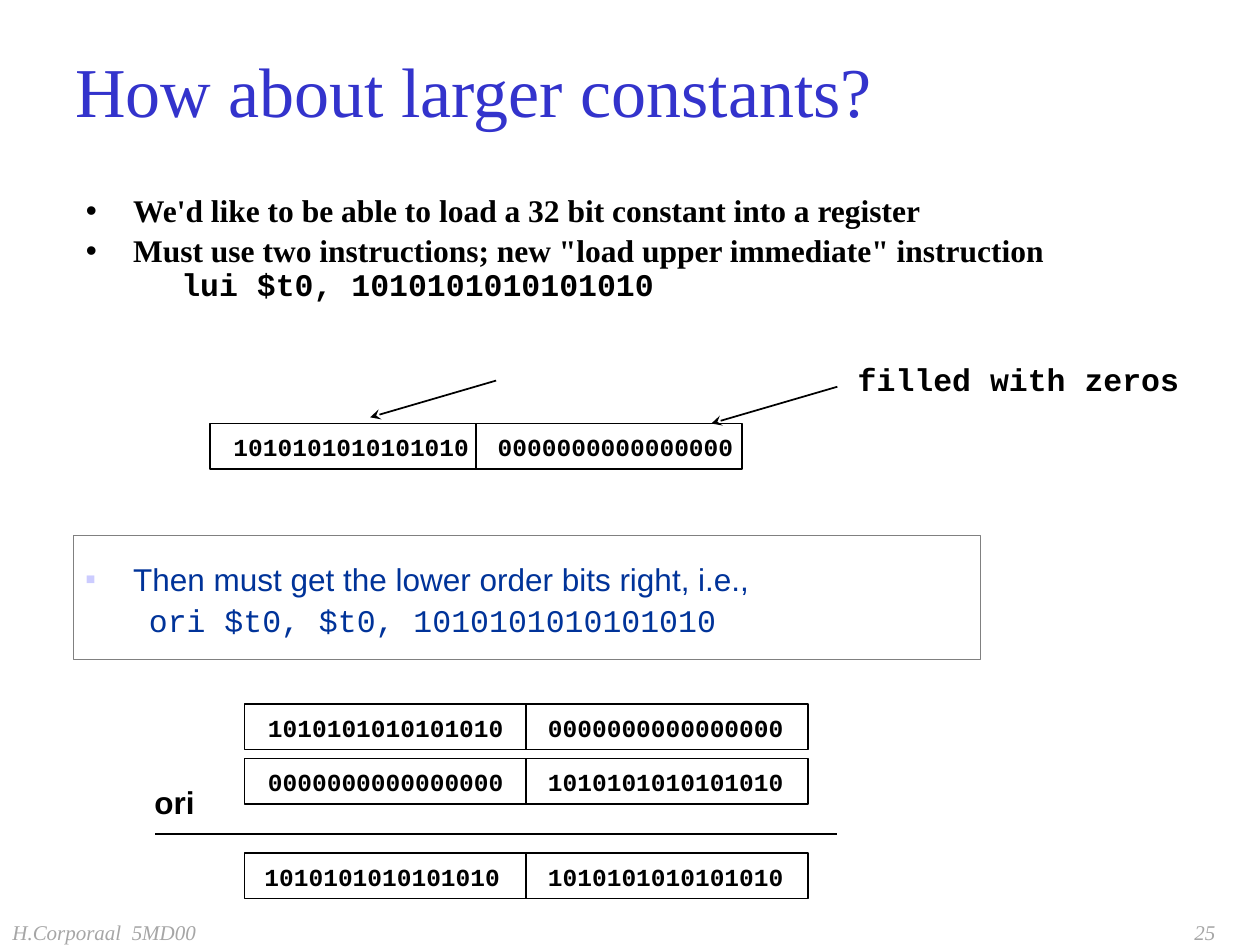
from lxml import etree
from pptx import Presentation
from pptx.dml.color import RGBColor
from pptx.enum.shapes import MSO_CONNECTOR, MSO_SHAPE
from pptx.enum.text import MSO_ANCHOR, PP_ALIGN
from pptx.oxml.ns import qn
from pptx.util import Pt

STRAIGHT = MSO_CONNECTOR.STRAIGHT
RECT = MSO_SHAPE.RECTANGLE
TOP, MIDDLE = MSO_ANCHOR.TOP, MSO_ANCHOR.MIDDLE
LEFT, CENTER, RIGHT = PP_ALIGN.LEFT, PP_ALIGN.CENTER, PP_ALIGN.RIGHT

SERIF, SANS, MONO = "Times New Roman", "Arial", "Courier New"
BLACK, BLUE, NAVY = "000000", "3333CC", "003399"
GRAY, DARK_GRAY, LILAC = "A6A6A6", "808080", "CCCCFF"
WIDE, TIGHT = (7.2, 3.6), (1.44, 2.16)
UPPER, ZEROS = "10" * 8, "0" * 16


def rgb(value):
    return RGBColor.from_string(value)


def set_frame(tf, insets, anchor):
    tf.word_wrap = True
    tf.vertical_anchor = anchor
    tf.margin_left = tf.margin_right = Pt(insets[0])
    tf.margin_top = tf.margin_bottom = Pt(insets[1])


def style(p, font, size, color, bold=False, italic=False, align=LEFT,
          spacing=None, before=0, after=0):
    p.alignment = align
    p.line_spacing = spacing
    p.space_before, p.space_after = Pt(before), Pt(after)
    for r in p.runs:
        r.font.name, r.font.size = font, Pt(size)
        r.font.bold, r.font.italic = bold, italic
        r.font.color.rgb = rgb(color)


def add_text(s, box, text, insets=WIDE, anchor=TOP, **look):
    sp = s.shapes.add_textbox(*map(Pt, box))
    set_frame(sp.text_frame, insets, anchor)
    p = sp.text_frame.paragraphs[0]
    p.text = text
    style(p, **look)


def add_rect(s, box, color, width):
    sp = s.shapes.add_shape(RECT, *map(Pt, box))
    sp.shadow.inherit = False
    sp.fill.background()
    sp.line.color.rgb = rgb(color)
    sp.line.width = Pt(width)
    return sp


def add_line(s, x1, y1, x2, y2, arrow=False):
    c = s.shapes.add_connector(STRAIGHT, Pt(x1), Pt(y1), Pt(x2), Pt(y2))
    c.line.color.rgb = rgb(BLACK)
    c.line.width = Pt(1)
    if arrow:
        ln = c.line._get_or_add_ln()
        etree.SubElement(ln, qn("a:tailEnd"), type="stealth")
    etree.SubElement(c._element.spPr, qn("a:effectLst"))


def indent(p, margin, hanging=0):
    pPr = p._p.get_or_add_pPr()
    pPr.set("marL", str(Pt(margin)))
    pPr.set("indent", str(Pt(-hanging)))
    return pPr


def add_bullet(p, char, color, percent=100):
    pPr = indent(p, 27, 27)
    clr = etree.SubElement(pPr, qn("a:buClr"))
    etree.SubElement(clr, qn("a:srgbClr"), val=color)
    etree.SubElement(pPr, qn("a:buSzPct"), val=str(percent * 1000))
    etree.SubElement(pPr, qn("a:buFont"), typeface=SANS)
    etree.SubElement(pPr, qn("a:buChar"), char=char)


def add_bit_row(s, left, top, cell_width, words, shift=12):
    for i, word in enumerate(words):
        x = left + i * cell_width
        add_rect(s, (x, top, cell_width, 25.9), BLACK, 1)
        add_text(s, (x + (11 if i else shift), top - 1.4, cell_width, 42.5),
                 word, TIGHT, font=MONO, size=14, color=BLACK, bold=True,
                 spacing=Pt(21), before=6, after=6)


def add_title(s, box):
    add_text(s, box, "How about larger constants?", anchor=MIDDLE,
             font=SERIF, size=40, color=BLUE)


def add_body(s, box):
    sp = s.shapes.add_textbox(*map(Pt, box))
    tf = sp.text_frame
    set_frame(tf, WIDE, TOP)
    tf.text = ("We'd like to be able to load a 32 bit constant into a register\n"
               'Must use two instructions; new "load upper immediate" instruction\n'
               f"lui $t0, {UPPER}")
    *points, code = tf.paragraphs
    for p in points:
        style(p, SERIF, 18, BLACK, bold=True, spacing=0.9, before=3.6)
        add_bullet(p, "•", BLACK)
    style(code, MONO, 18, BLACK, bold=True, spacing=0.9)
    indent(code, 54.5)


def add_lui_diagram(s, left, top):
    add_bit_row(s, left, top, 152, (UPPER, ZEROS))
    for x, y in ((163.5, -24.5), (358.5, -21)):
        add_line(s, left + x, top + y, left + x - 72, top + y + 21, arrow=True)
    add_text(s, (left + 368.7, top - 44, 228, 48), "filled with zeros", TIGHT,
             font=MONO, size=18, color=BLACK, bold=True,
             spacing=Pt(27), before=6, after=6)


def add_ori_box(s, box):
    sp = add_rect(s, box, DARK_GRAY, 0.75)
    tf = sp.text_frame
    set_frame(tf, WIDE, MIDDLE)
    tf.text = ("Then must get the lower order bits right, i.e.,\n"
               f"ori $t0, $t0, {UPPER}")
    point, code = tf.paragraphs
    style(point, SANS, 18, NAVY, spacing=1.1, before=3.6)
    add_bullet(point, "■", LILAC, 50)
    style(code, MONO, 18, NAVY, spacing=1.1)
    indent(code, 36)


def add_ori_diagram(s, left, top):
    cells = left + 85
    add_bit_row(s, cells, top, 161, (UPPER, ZEROS))
    add_bit_row(s, cells, top + 31, 161, (ZEROS, UPPER))
    add_bit_row(s, cells, top + 85, 161, (UPPER, UPPER), shift=10)
    add_line(s, left + 34, top + 74, left + 423.5, top + 74)
    add_text(s, (left, top + 48.2, 90, 26), "ori", TIGHT, font=SANS, size=18,
             color=BLACK, bold=True, align=CENTER, spacing=Pt(16))


def add_footer(s, top):
    for x, text, align in ((0, "H.Corporaal\u00a0 5MD00", LEFT),
                           (533.5, "25", RIGHT)):
        add_text(s, (x, top, 168, 14.4), text, (7.2, 0), MIDDLE, font=SERIF,
                 size=12, color=GRAY, italic=True, align=align)


def main():
    prs = Presentation()
    prs.slide_width, prs.slide_height = Pt(720), Pt(540)
    s = prs.slides.add_slide(prs.slide_layouts[6])
    add_footer(s, 525.6)
    add_body(s, (42, 108, 678, 132))
    add_ori_diagram(s, 54.7, 402.5)
    add_lui_diagram(s, 120, 242)
    add_title(s, (36, 12.2, 654, 78))
    add_ori_box(s, (42, 306, 518.4, 71))
    prs.save("out.pptx")


if __name__ == "__main__":
    main()
